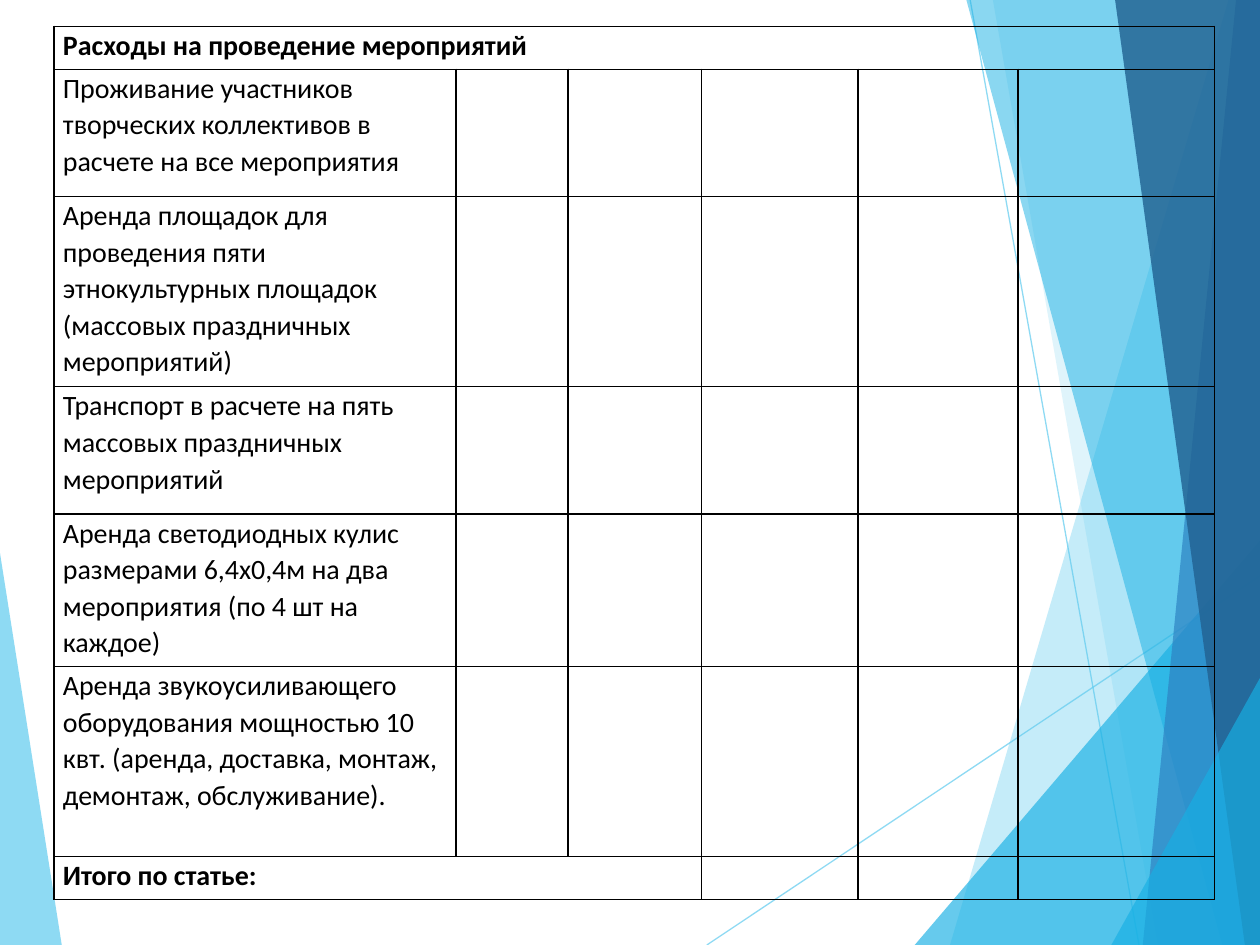
from lxml.etree import SubElement
from pptx import Presentation
from pptx.dml.color import RGBColor
from pptx.enum.shapes import MSO_CONNECTOR
from pptx.oxml.ns import qn
from pptx.util import Inches, Pt

COLORS = {"sky": "5FCBEF", "cyan": "17B0E4", "blue": "2E83C3",
          "navy": "226292", "text": "000000", "border": "000000"}

# Each facet: colour, opacity in percent, corner points in inches
FACETS = [
    ("sky", 70, [(0, 4.39), (0.49, 7.5), (0, 7.5)]),
    ("sky", 36, [(9.75, 0), (7.54, 7.5), (10, 7.5), (10, 0)]),
    ("sky", 20, [(7.88, 0), (9.19, 7.5), (10, 7.5), (10, 0)]),
    ("cyan", 66, [(7.26, 7.5), (10, 4.29), (10, 7.5)]),
    ("cyan", 50, [(7.67, 0), (9.7, 7.5), (10, 7.5), (10, 0)]),
    ("blue", 70, [(9.81, 0), (9.07, 7.5), (10, 7.5), (10, 0)]),
    ("navy", 82, [(8.85, 0), (9.88, 7.5), (10, 7.5), (10, 0)]),
    ("cyan", 66, [(8.82, 7.5), (10, 5.38), (10, 7.5)]),
]
RAYS = [((5.61, 7.5), (10, 4.57)), ((7.7, 0), (9.04, 7.5))]

COLUMN_WIDTHS = [3.19, 0.89, 1.06, 1.24, 1.27, 1.56]
# Each row: height, text, number of columns spanned by the first cell
EXPENSES = [
    (0.34, "Расходы на проведение мероприятий", 6),
    (1.01, "Проживание участников творческих коллективов в расчете на все мероприятия", 1),
    (1.51, "Аренда площадок для проведения пяти этнокультурных площадок "
           "(массовых праздничных мероприятий)", 1),
    (1.01, "Транспорт в расчете на пять массовых праздничных мероприятий", 1),
    (1.21, "Аренда светодиодных кулис размерами 6,4х0,4м на два мероприятия "
           "(по 4 шт на каждое)", 1),
    (1.51, "Аренда звукоусиливающего оборудования мощностью 10 квт. "
           "(аренда, доставка, монтаж, демонтаж, обслуживание).", 1),
    (0.34, "Итого по статье:", 3),
]
CELL_FORMAT = {"margin_left": Inches(0.07), "margin_right": Inches(0.07),
               "margin_top": 0, "margin_bottom": 0}
FONT_FORMAT = {"name": "Calibri", "size": Pt(16)}
PLAIN_TABLE = {"first_row": False, "horz_banding": False}


def rgb(name):
    return RGBColor.from_string(COLORS[name])


def apply_format(target, values):
    for name, value in values.items():
        setattr(target, name, value)


def set_opacity(format_element, percent):
    color = next(format_element.iter(qn("a:srgbClr")))
    SubElement(color, qn("a:alpha"), val=str(percent * 1000))


def add_facet(slide, left, top, color, opacity, points):
    corners = [(left + Inches(x), top + Inches(y)) for x, y in points]
    builder = slide.shapes.build_freeform(*corners[0])
    builder.add_line_segments(corners[1:], close=True)
    shape = builder.convert_to_shape()
    shape.shadow.inherit = False
    shape.line.fill.background()
    shape.fill.solid()
    shape.fill.fore_color.rgb = rgb(color)
    set_opacity(shape.element.spPr, opacity)


def add_ray(slide, left, top, start, end):
    ray = slide.shapes.add_connector(
        MSO_CONNECTOR.STRAIGHT,
        left + Inches(start[0]), top + Inches(start[1]),
        left + Inches(end[0]), top + Inches(end[1]))
    ray.line.width = Pt(0.75)
    ray.line.color.rgb = rgb("sky")
    set_opacity(ray.element.spPr, 70)
    SubElement(ray.element.spPr, qn("a:effectLst"))


def add_backdrop(slide, left, top):
    """Draw the left facet, then the rays, then the right-hand facets."""
    add_facet(slide, left, top, *FACETS[0])
    for start, end in RAYS:
        add_ray(slide, left, top, start, end)
    for facet in FACETS[1:]:
        add_facet(slide, left, top, *facet)


def style_cell(cell):
    """Give the cell black borders, no fill and narrow margins."""
    apply_format(cell, CELL_FORMAT)
    properties = cell._tc.get_or_add_tcPr()
    for side in ("lnL", "lnR", "lnT", "lnB"):
        border = SubElement(properties, qn(f"a:{side}"), w=str(Pt(1)))
        fill = SubElement(border, qn("a:solidFill"))
        SubElement(fill, qn("a:srgbClr"), val=COLORS["border"])
    cell.fill.background()


def write_cell(cell, text, bold):
    paragraph = cell.text_frame.paragraphs[0]
    paragraph.line_spacing = 1.07
    run = paragraph.add_run()
    run.text = text
    apply_format(run.font, {**FONT_FORMAT, "bold": bold})
    run.font.color.rgb = rgb("text")


def add_expense_table(slide, left, top, width, height):
    table = slide.shapes.add_table(len(EXPENSES), len(COLUMN_WIDTHS),
                                   left, top, width, height).table
    apply_format(table, PLAIN_TABLE)
    for column, column_width in zip(table.columns, COLUMN_WIDTHS):
        column.width = Inches(column_width)
    for cell in table.iter_cells():
        style_cell(cell)
    for index, (row_height, text, span) in enumerate(EXPENSES):
        table.rows[index].height = Inches(row_height)
        first = table.cell(index, 0)
        if span > 1:
            first.merge(table.cell(index, span - 1))
        write_cell(first, text, bold=span > 1)


def main():
    presentation = Presentation()
    presentation.slide_width = Inches(10)
    presentation.slide_height = Inches(7.5)
    slide = presentation.slides.add_slide(presentation.slide_layouts[6])
    add_backdrop(slide, Inches(0), Inches(0))
    add_expense_table(slide, Inches(0.43), Inches(0.21), Inches(9.21), Inches(6.93))
    presentation.save("out.pptx")


if __name__ == "__main__":
    main()
